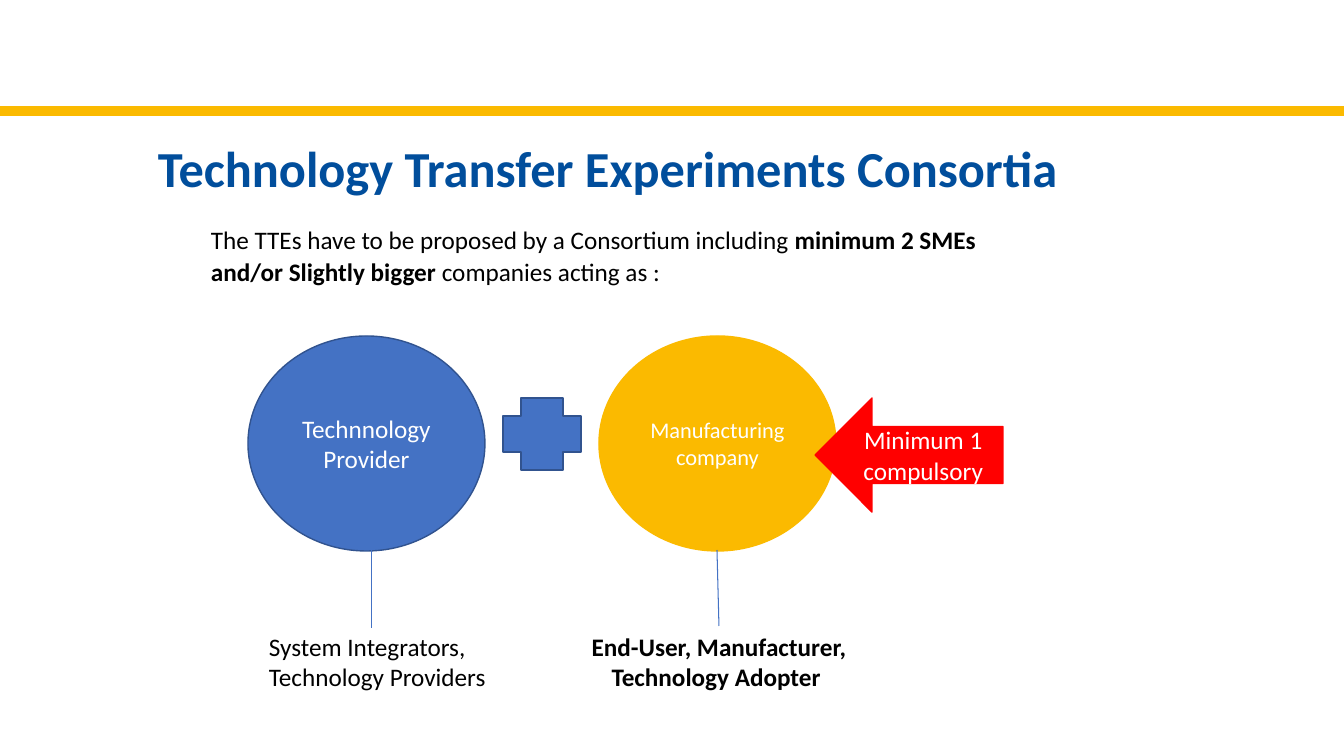
from pptx import Presentation
from pptx.dml.color import RGBColor
from pptx.enum.shapes import MSO_CONNECTOR, MSO_SHAPE
from pptx.enum.text import MSO_ANCHOR, PP_ALIGN
from pptx.oxml.ns import qn
from pptx.util import Emu, Pt
from lxml.etree import SubElement

PX = 12192000 / 1344
WHITE = RGBColor(0xFF, 0xFF, 0xFF)
BLACK = RGBColor(0, 0, 0)
BLUE = RGBColor(0x44, 0x72, 0xC4)
DARK_BLUE = RGBColor(0x31, 0x53, 0x8F)
TITLE_BLUE = RGBColor(0x01, 0x4E, 0x9C)
YELLOW = RGBColor(0xFB, 0xBA, 0x00)
RED = RGBColor(0xFF, 0, 0)


def px(*values):
    return [Emu(round(v * PX)) for v in values]


class Deck:
    font = "Calibri"

    def __init__(self, width, height):
        self.prs = Presentation()
        self.prs.slide_width, self.prs.slide_height = px(width, height)
        self.s = self.prs.slides.add_slide(self.prs.slide_layouts[6])

    def fill_text(self, tf, paragraphs, size, color, align, spacing=None):
        tf.word_wrap = True
        for i, runs in enumerate(paragraphs):
            p = tf.add_paragraph() if i else tf.paragraphs[0]
            p.alignment = align
            if spacing:
                p.line_spacing = spacing
            for text, bold in runs:
                r = p.add_run()
                r.text = text
                r.font.name = self.font
                r.font.size = Pt(size)
                r.font.bold = bold
                r.font.color.rgb = color

    def text(self, box, paragraphs, size=18, color=BLACK,
             align=PP_ALIGN.LEFT, spacing=None, margin=True):
        sp = self.s.shapes.add_textbox(*px(*box))
        tf = sp.text_frame
        if not margin:
            tf.margin_left = tf.margin_right = tf.margin_bottom = 0
            tf.margin_top = Pt(1)
        self.fill_text(tf, paragraphs, size, color, align, spacing)
        return sp

    def shape(self, kind, box, fill, line, lines=(), size=18):
        sp = self.s.shapes.add_shape(kind, *px(*box))
        sp.shadow.inherit = False
        sp.fill.solid()
        sp.fill.fore_color.rgb = fill
        sp.line.color.rgb = line
        sp.line.width = Pt(1)
        sp.text_frame.vertical_anchor = MSO_ANCHOR.MIDDLE
        self.fill_text(sp.text_frame, [[(t, False)] for t in lines],
                       size, WHITE, PP_ALIGN.CENTER)
        return sp

    def line(self, ends, color, width):
        c = self.s.shapes.add_connector(MSO_CONNECTOR.STRAIGHT, *px(*ends))
        c.line.color.rgb = color
        c.line.width = Pt(width)
        SubElement(c._element.spPr, qn("a:effectLst"))
        return c


def main():
    d = Deck(1344, 756)
    d.line((0, 111, 1344, 111), YELLOW, 6.5)

    d.shape(MSO_SHAPE.OVAL, (248, 336, 237, 215), BLUE, DARK_BLUE,
            ["Technnology Provider"])
    d.shape(MSO_SHAPE.OVAL, (599, 336, 237, 215), YELLOW, YELLOW,
            ["Manufacturing company"], 16)
    d.shape(MSO_SHAPE.CROSS, (503, 398, 78, 72), BLUE, DARK_BLUE)

    d.line((372, 501, 372, 628), BLUE, 0.75)
    d.text((259, 626, 253, 72), [[("System Integrators,", False)],
                                 [("Technology Providers", False)]])

    adopter_line = d.line((717, 550, 719, 626), BLUE, 0.75)
    adopter = d.text((569, 626, 300, 72),
                     [[("End-User, Manufacturer, Technology Adopter ", True)]],
                     align=PP_ALIGN.CENTER)
    adopter_line.end_connect(adopter, 0)

    d.shape(MSO_SHAPE.LEFT_ARROW, (815, 398, 188, 114), RED, RED,
            ["Minimum 1", "compulsory"])

    d.text((201, 217, 858, 74),
           [[("The TTEs have to be proposed by a Consortium including", False),
             (" minimum 2 SMEs and/or Slightly bigger ", True),
             ("companies acting as :", False)]], spacing=1.07)
    d.text((52, 136, 1006, 63),
           [[("Technology Transfer Experiments Consortia", True)]],
           36, TITLE_BLUE, PP_ALIGN.RIGHT, margin=False)

    d.prs.save("out.pptx")


if __name__ == "__main__":
    main()
